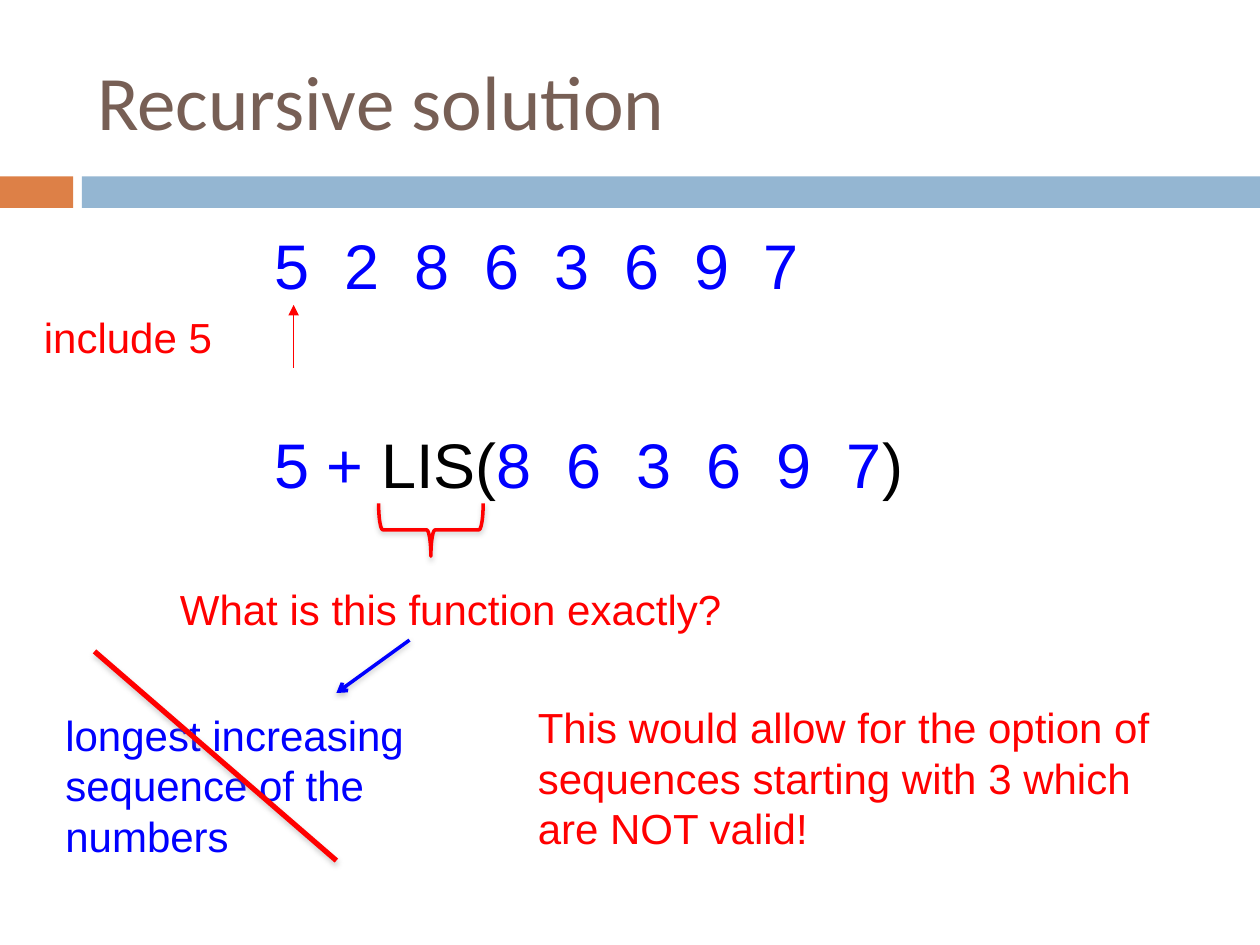
import pptx
import pptx.dml.color
import pptx.enum.shapes
import pptx.enum.text
import pptx.oxml
import pptx.oxml.ns
import pptx.util
from pptx.util import Inches

COLORS = {
    "title": "775F55",
    "orange": "DD8047",
    "sky": "94B6D2",
    "blue": "0000FF",
    "red": "FF0000",
    "black": "000000",
}
SHADOW = (
    '<a:effectLst %s><a:outerShdw blurRad="39370" dist="20320" dir="5400000" rotWithShape="0">'
    '<a:srgbClr val="808080"><a:alpha val="38000"/></a:srgbClr></a:outerShdw></a:effectLst>'
    % pptx.oxml.ns.nsdecls("a")
)


def rgb(name):
    """Return the palette colour called name."""
    return pptx.dml.color.RGBColor.from_string(COLORS[name])


def add_bar(slide, left, top, width, height, color):
    """Add a plain filled rectangle."""
    bar = slide.shapes.add_shape(
        pptx.enum.shapes.MSO_SHAPE.RECTANGLE,
        Inches(left), Inches(top), Inches(width), Inches(height))
    bar.fill.solid()
    bar.fill.fore_color.rgb = rgb(color)
    bar.line.fill.background()
    bar.shadow.inherit = False


def add_words(slide, left, top, width, height, size, *pieces):
    """Add a wrapped one-paragraph text from (words, color) pieces."""
    box = slide.shapes.add_textbox(Inches(left), Inches(top), Inches(width), Inches(height))
    frame = box.text_frame
    frame.word_wrap = True
    frame.auto_size = pptx.enum.text.MSO_AUTO_SIZE.SHAPE_TO_FIT_TEXT
    paragraph = frame.paragraphs[0]
    paragraph.font.name = "Arial"
    paragraph.font.size = pptx.util.Pt(size)
    for words, color in pieces:
        run = paragraph.add_run()
        run.text = words
        run.font.color.rgb = rgb(color)


def add_stroke(slide, start, end, color, weight, head=None, shadow=True):
    """Add a straight line, with an arrowhead at its end if one is named."""
    stroke = slide.shapes.add_connector(
        pptx.enum.shapes.MSO_CONNECTOR.STRAIGHT, *map(Inches, start + end))
    stroke.line.color.rgb = rgb(color)
    stroke.line.width = pptx.util.Pt(weight)
    if head:
        line = stroke.line._get_or_add_ln()
        line.append(pptx.oxml.parse_xml(
            '<a:tailEnd %s type="%s"/>' % (pptx.oxml.ns.nsdecls("a"), head)))
    effects = SHADOW if shadow else "<a:effectLst %s/>" % pptx.oxml.ns.nsdecls("a")
    stroke._element.spPr.append(pptx.oxml.parse_xml(effects))


def add_header(slide, left, top, width, height):
    """Place the title and the two-colour band under it."""
    title = slide.shapes.title
    title.left, title.top = Inches(left + 0.67), Inches(top)
    title.width, title.height = Inches(width - 1.08), Inches(1.08)
    title.text_frame.text = "Recursive solution"
    title.text_frame.vertical_anchor = pptx.enum.text.MSO_ANCHOR.MIDDLE
    paragraph = title.text_frame.paragraphs[0]
    paragraph.alignment = pptx.enum.text.PP_ALIGN.LEFT
    paragraph.font.name = "Calibri"
    paragraph.font.size = pptx.util.Pt(44)
    paragraph.font.color.rgb = rgb("title")
    band = 0.25
    add_bar(slide, left, top + height - band, 0.58, band, "orange")
    add_bar(slide, left + 0.65, top + height - band, width - 0.65, band, "sky")


def add_sequence(slide, left, top):
    """Place the number sequence with its first element marked."""
    add_words(slide, left + 1.83, top, 5.58, 0.7, 36, ("5  2  8  6  3  6  9  7", "blue"))
    add_stroke(slide, (left + 2.08, top + 1.17), (left + 2.08, top + 0.67),
               "red", 0.75, "triangle", shadow=False)
    add_words(slide, left, top + 0.67, 1.75, 0.5, 24, ("include 5", "red"))


def add_recursion(slide, left, top):
    """Place the recursive call, its brace and the question under it."""
    add_words(slide, left + 0.75, top, 5.58, 0.71, 36,
              ("5 + ", "blue"), ("LIS(", "black"), ("8  6  3  6  9  7", "blue"), (")", "black"))
    brace = slide.shapes.add_shape(
        pptx.enum.shapes.MSO_SHAPE.LEFT_BRACE,
        Inches(left + 1.88), Inches(top + 0.46), Inches(0.42), Inches(0.83))
    brace.rotation = 270
    brace.adjustments[0] = 0.08
    brace.fill.background()
    brace.line.color.rgb = rgb("red")
    brace.line.width = pptx.util.Pt(2)
    brace._element.spPr.append(pptx.oxml.parse_xml(SHADOW))
    add_words(slide, left, top + 1.25, 5.67, 0.51, 24, ("What is this function exactly?", "red"))


def add_answers(slide, left, top):
    """Place the rejected definition and the reason against it."""
    add_words(slide, left, top + 0.5, 3.58, 1.31, 24,
              ("longest increasing sequence of the numbers", "blue"))
    add_stroke(slide, (left + 2.83, top), (left + 2.25, top + 0.42), "blue", 2, "arrow")
    add_stroke(slide, (left + 0.33, top + 0.09), (left + 2.25, top + 1.75), "red", 3)
    add_words(slide, left + 3.75, top + 0.44, 5.08, 1.31, 24,
              ("This would allow for the option of sequences starting with 3 "
               "which are NOT valid!", "red"))


def main():
    """Build and save the slide."""
    deck = pptx.Presentation()
    deck.slide_width, deck.slide_height = Inches(10), Inches(7.5)
    slide = deck.slides.add_slide(deck.slide_layouts[5])
    add_header(slide, 0, 0.25, 10, 1.4)
    add_sequence(slide, 0.25, 1.75)
    add_recursion(slide, 1.33, 3.33)
    add_answers(slide, 0.42, 5.08)
    deck.save("out.pptx")


if __name__ == "__main__":
    main()
